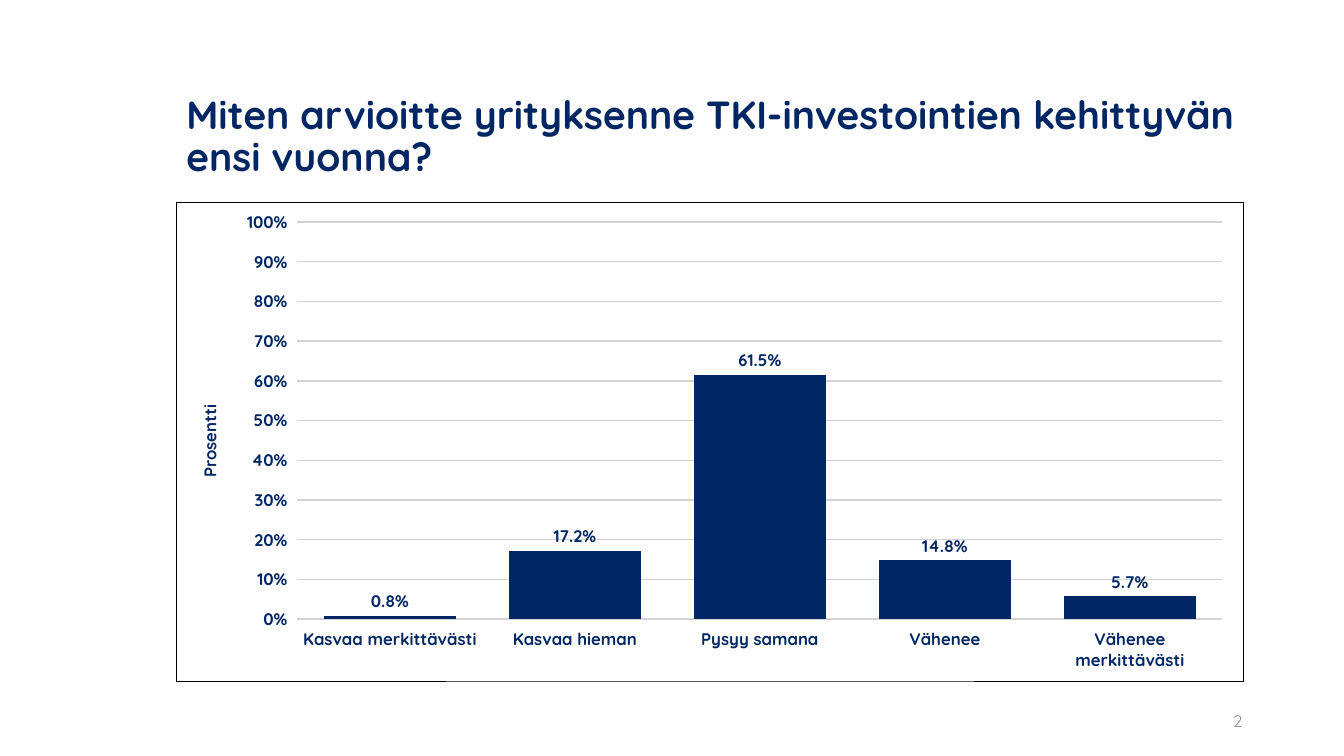
from lxml import etree
from pptx import Presentation
from pptx.chart.data import CategoryChartData
from pptx.dml.color import RGBColor
from pptx.enum.chart import XL_CHART_TYPE, XL_LABEL_POSITION, XL_TICK_MARK
from pptx.enum.text import MSO_ANCHOR, PP_ALIGN
from pptx.oxml import parse_xml
from pptx.oxml.ns import nsdecls, qn
from pptx.util import Inches, Pt

COLUMN = XL_CHART_TYPE.COLUMN_CLUSTERED
OUTSIDE_END = XL_LABEL_POSITION.OUTSIDE_END
TICK_OUT = XL_TICK_MARK.OUTSIDE
MIDDLE = MSO_ANCHOR.MIDDLE
LEFT, RIGHT = PP_ALIGN.LEFT, PP_ALIGN.RIGHT

FONT = "Quicksand"
COLORS = {"navy": "002663", "grey": "8C8E9F", "grid": "D3D3D3",
          "white": "FFFFFF", "border": "000000"}
WIDTH, HEIGHT = 13.33, 7.5
CONTENT_LEFT, CONTENT_WIDTH = 1.75, 10.59
ANSWERS = {
    "Kasvaa merkittävästi": 0.008,
    "Kasvaa hieman": 0.172,
    "Pysyy samana": 0.615,
    "Vähenee": 0.148,
    "Vähenee merkittävästi": 0.057,
}


def color(name):
    """Return the named palette colour."""
    return RGBColor.from_string(COLORS[name])


def style_font(font, size, color_name, bold):
    """Apply the slide's typeface with a size, colour and weight."""
    font.name = FONT
    font.size = Pt(size)
    font.bold = bold
    font.color.rgb = color(color_name)


def add_text(slide, box, text, size, color_name, bold=False, align=LEFT, spacing=1.0):
    """Add a vertically centred, wrapping line of text."""
    frame = slide.shapes.add_textbox(*map(Inches, box)).text_frame
    frame.word_wrap = True
    frame.vertical_anchor = MIDDLE
    paragraph = frame.paragraphs[0]
    paragraph.text = text
    paragraph.alignment = align
    paragraph.line_spacing = spacing
    style_font(paragraph.runs[0].font, size, color_name, bold)


def area_format(fill, border=None):
    """Build chart area properties with a solid fill and optional border."""
    line = "<a:ln><a:noFill/></a:ln>"
    if border:
        line = (f'<a:ln w="{Pt(0.5)}"><a:solidFill><a:srgbClr val="{border}"/>'
                "</a:solidFill></a:ln>")
    return parse_xml(
        f'<c:spPr {nsdecls("c", "a")}><a:solidFill><a:srgbClr val="{fill}"/>'
        f"</a:solidFill>{line}</c:spPr>")


def frame_chart(chart):
    """Set the plot's share of the chart, its fill and the outer border."""
    chart_part = chart.element.find(qn("c:chart"))
    chart_part.addnext(area_format(COLORS["white"], COLORS["border"]))
    plot_area = chart_part.find(qn("c:plotArea"))
    plot_area.append(area_format(COLORS["white"]))
    for old_layout in plot_area.findall(qn("c:layout")):
        plot_area.remove(old_layout)
    layout = etree.Element(qn("c:layout"))
    manual = etree.SubElement(layout, qn("c:manualLayout"))
    settings = {"layoutTarget": "inner", "xMode": "edge", "yMode": "edge",
                "x": "0.113", "y": "0.042", "w": "0.867", "h": "0.829"}
    for tag, value in settings.items():
        etree.SubElement(manual, qn(f"c:{tag}")).set("val", value)
    plot_area.insert(0, layout)


def style_axes(chart):
    """Format the answer axis and the percentage axis."""
    for axis in (chart.category_axis, chart.value_axis):
        axis.major_tick_mark = TICK_OUT
        axis.format.line.fill.background()
    percent = chart.value_axis
    percent.minimum_scale, percent.maximum_scale = 0, 1
    percent.major_unit = 0.1
    percent.tick_labels.number_format = "0%"
    percent.tick_labels.number_format_is_linked = False
    percent.major_gridlines.format.line.color.rgb = color("grid")
    percent.major_gridlines.format.line.width = Pt(1)
    title = percent.axis_title.text_frame
    title.text = "Prosentti"
    style_font(title.paragraphs[0].runs[0].font, 12, "navy", True)


def style_columns(plot):
    """Format the columns and their value labels."""
    plot.vary_by_categories = False
    plot.gap_width, plot.overlap = 40, -2
    columns = plot.series[0]
    columns.invert_if_negative = False
    columns.format.fill.solid()
    columns.format.fill.fore_color.rgb = color("navy")
    labels = columns.data_labels
    labels.show_value = True
    labels.number_format = "0.0%"
    labels.number_format_is_linked = False
    labels.position = OUTSIDE_END
    style_font(labels.font, 12, "navy", True)


def add_answer_chart(slide, box):
    """Add the column chart of survey answers."""
    data = CategoryChartData(number_format="0.0%")
    data.categories = list(ANSWERS)
    data.add_series("Series 1", list(ANSWERS.values()))
    chart = slide.shapes.add_chart(COLUMN, *map(Inches, box), data).chart
    chart.has_title = False
    chart.has_legend = False
    style_font(chart.font, 12, "navy", True)
    style_axes(chart)
    style_columns(chart.plots[0])
    frame_chart(chart)


def main():
    """Build and save the slide."""
    deck = Presentation()
    deck.slide_width, deck.slide_height = Inches(WIDTH), Inches(HEIGHT)
    slide = deck.slides.add_slide(deck.slide_layouts[6])
    add_text(slide, (CONTENT_LEFT, 0.64, CONTENT_WIDTH, 1.45),
             "Miten arvioitte yrityksenne TKI-investointien kehittyvän ensi vuonna?",
             28, "navy", bold=True, spacing=0.9)
    add_text(slide, (9.42, 6.95, 3, 0.4), "2", 12, "grey", align=RIGHT)
    add_answer_chart(slide, (CONTENT_LEFT, 2, CONTENT_WIDTH, 4.76))
    deck.save("out.pptx")


if __name__ == "__main__":
    main()
